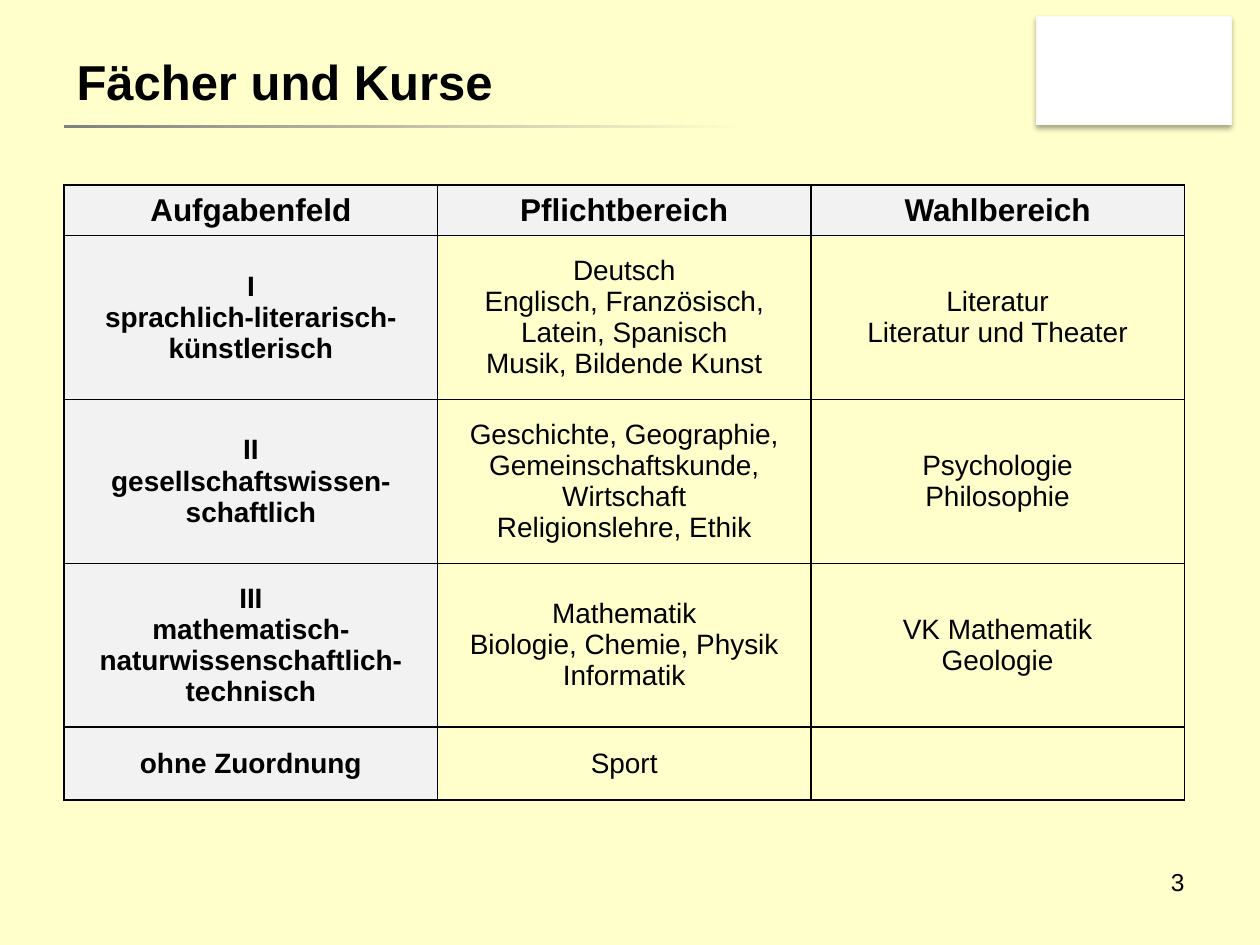
from dataclasses import dataclass

from lxml import etree
from pptx import Presentation, oxml, util as u
from pptx.dml.color import RGBColor
from pptx.enum import shapes, text
from pptx.oxml.ns import nsdecls, qn


@dataclass(frozen=True)
class Theme:
    font: str = "Arial"
    background: str = "FFFFCC"
    ink: str = "000000"
    label: str = "F2F2F2"
    rule: str = "808080"
    panel: str = "FFFFFF"
    panel_edge: str = "F9F9F9"
    title: int = 28
    header: int = 18
    body: int = 16
    number: int = 14


@dataclass(frozen=True)
class Box:
    left: float
    top: float
    width: float
    height: float

    def emu(self) -> list:
        return [u.Inches(v) for v in (self.left, self.top, self.width, self.height)]


@dataclass(frozen=True)
class Row:
    height: float
    field: str
    required: str
    elective: str


THEME = Theme()
ROWS = [
    Row(0.38, "Aufgabenfeld", "Pflichtbereich", "Wahlbereich"),
    Row(1.3, "I\nsprachlich-literarisch-künstlerisch",
        "Deutsch\nEnglisch, Französisch, Latein, Spanisch\nMusik, Bildende Kunst",
        "Literatur\nLiteratur und Theater"),
    Row(1.3, "II\ngesellschaftswissen-schaftlich",
        "Geschichte, Geographie, Gemeinschaftskunde, Wirtschaft\nReligionslehre, Ethik",
        "Psychologie\nPhilosophie"),
    Row(1.3, "III\nmathematisch-naturwissenschaftlich-technisch",
        "Mathematik\nBiologie, Chemie, Physik\nInformatik",
        "VK Mathematik\nGeologie"),
    Row(0.58, "ohne Zuordnung", "Sport", ""),
]


def rgb(value: str) -> RGBColor:
    return RGBColor.from_string(value)


def write(tf, content: str, size: int, align, bold: bool = False) -> None:
    tf.text = content
    for p in tf.paragraphs:
        p.alignment = align
        for r in p.runs:
            r.font.name = THEME.font
            r.font.size = u.Pt(size)
            r.font.bold = bold
            r.font.color.rgb = rgb(THEME.ink)


def add_text(s, box: Box, content: str, size: int, align, anchor, bold: bool = False) -> None:
    tf = s.shapes.add_textbox(*box.emu()).text_frame
    tf.word_wrap = True
    tf.vertical_anchor = anchor
    write(tf, content, size, align, bold)


def add_rect(s, box: Box):
    sp = s.shapes.add_shape(shapes.MSO_SHAPE.RECTANGLE, *box.emu())
    sp.shadow.inherit = False
    return sp


def add_panel(s, box: Box) -> None:
    sp = add_rect(s, box)
    sp.fill.solid()
    sp.fill.fore_color.rgb = rgb(THEME.panel)
    sp.line.color.rgb = rgb(THEME.panel_edge)
    sp.line.width = u.Pt(0.75)
    effects = sp._element.spPr.find(qn("a:effectLst"))
    effects.append(oxml.parse_xml(
        f'<a:outerShdw {nsdecls("a")} blurRad="{u.Pt(3.1)}" dist="{u.Pt(1.8)}" '
        f'dir="5400000" algn="t" rotWithShape="0"><a:srgbClr val="{THEME.ink}">'
        '<a:alpha val="35000"/></a:srgbClr></a:outerShdw>'))


def add_rule(s, box: Box) -> None:
    sp = add_rect(s, box)
    sp.line.fill.background()
    sp.fill.gradient()
    sp.fill.gradient_angle = 0
    for stop, position, color in zip(sp.fill.gradient_stops, (0, 1),
                                     (THEME.rule, THEME.background)):
        stop.position = position
        stop.color.rgb = rgb(color)


def add_borders(cell) -> None:
    tc_pr = cell._tc.get_or_add_tcPr()
    for side in ("lnL", "lnR", "lnT", "lnB"):
        ln = etree.SubElement(tc_pr, qn(f"a:{side}"), w=str(u.Pt(1)))
        fill = etree.SubElement(ln, qn("a:solidFill"))
        etree.SubElement(fill, qn("a:srgbClr"), val=THEME.ink)


def add_course_table(s, box: Box, rows: list[Row]) -> None:
    table = s.shapes.add_table(len(rows), 3, *box.emu()).table
    table.first_row = table.horz_banding = False
    for column in table.columns:
        column.width = u.Inches(box.width / 3)
    for i, row in enumerate(rows):
        table.rows[i].height = u.Inches(row.height)
        for j, content in enumerate((row.field, row.required, row.elective)):
            cell = table.cell(i, j)
            is_label = i == 0 or j == 0
            add_borders(cell)
            if is_label:
                cell.fill.solid()
                cell.fill.fore_color.rgb = rgb(THEME.label)
            else:
                cell.fill.background()
            cell.vertical_anchor = text.MSO_ANCHOR.MIDDLE
            write(cell.text_frame, content, THEME.body if i else THEME.header,
                  text.PP_ALIGN.CENTER, is_label)


def main() -> None:
    prs = Presentation()
    prs.slide_width, prs.slide_height = u.Inches(10), u.Inches(7.5)
    s = prs.slides.add_slide(prs.slide_layouts[6])
    s.background.fill.solid()
    s.background.fill.fore_color.rgb = rgb(THEME.background)

    add_panel(s, Box(8.23, 0.13, 1.54, 0.86))
    add_rule(s, Box(0.51, 0.99, 5.42, 0.03))
    add_text(s, Box(0.51, 0.21, 5.44, 0.87), "Fächer und Kurse", THEME.title,
             text.PP_ALIGN.LEFT, text.MSO_ANCHOR.MIDDLE, bold=True)
    add_course_table(s, Box(0.51, 1.47, 8.89, sum(row.height for row in ROWS)), ROWS)
    add_text(s, Box(7.17, 6.83, 2.33, 0.52), "3", THEME.number,
             text.PP_ALIGN.RIGHT, text.MSO_ANCHOR.TOP)
    prs.save("out.pptx")


if __name__ == "__main__":
    main()
